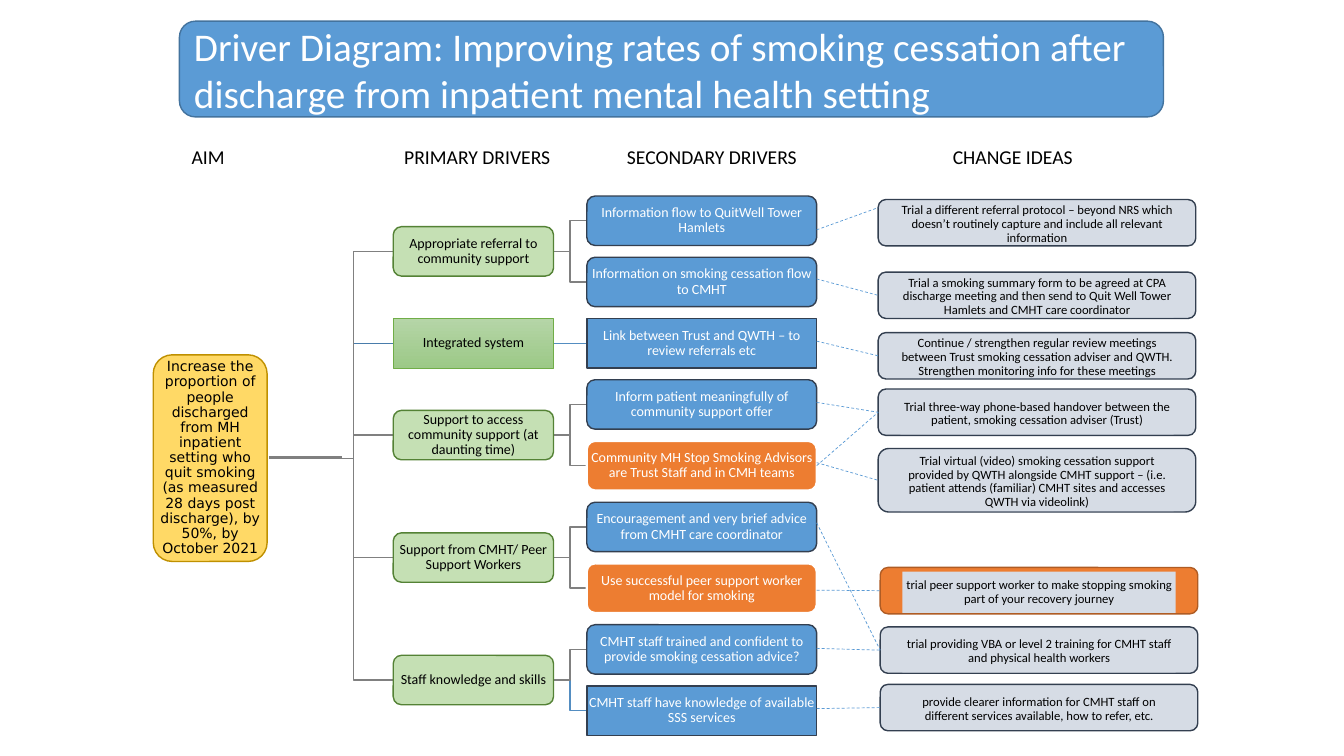
from pptx import Presentation
from pptx import util as u
from pptx.dml import color, line as dml_line
from pptx.enum import dml, shapes, text
from pptx.oxml import ns
from lxml import etree

TITLE = "Driver Diagram: Improving rates of smoking cessation after discharge from inpatient mental health setting"
AIM = ("Increase the proportion of people discharged from MH inpatient setting who quit smoking "
       "(as measured 28 days post discharge), by 50%, by October 2021")
HEADINGS = [
    ("AIM", 1.47, 1.19, "center"),
    ("PRIMARY DRIVERS", 3.91, 2.05, "left"),
    ("SECONDARY DRIVERS", 6.12, 2.05, "left"),
    ("CHANGE IDEAS", 9.02, 2.05, "center"),
]
DRIVERS = [
    ("Appropriate referral to community support", "primary", [
        ("Information flow to QuitWell Tower Hamlets", "secondary"),
        ("Information on smoking cessation flow to CMHT", "secondary")]),
    ("Integrated system", "integrated", [
        ("Link between Trust and QWTH – to review referrals etc", "secondary_square")]),
    ("Support to access community support (at daunting time)", "primary", [
        ("Inform patient meaningfully of community support offer", "secondary"),
        ("Community MH Stop Smoking Advisors are Trust Staff and in CMH teams", "highlight")]),
    ("Support from CMHT/ Peer Support Workers", "primary", [
        ("Encouragement and very brief advice from CMHT care coordinator", "secondary"),
        ("Use successful peer support worker model for smoking", "highlight")]),
    ("Staff knowledge and skills", "primary", [
        ("CMHT staff trained and confident to provide smoking cessation advice?", "secondary"),
        ("CMHT staff have knowledge of available SSS services", "secondary_square")]),
]
IDEAS = [
    ("Trial a different referral protocol – beyond NRS which doesn’t routinely capture and include all "
     "relevant information", 8.71, 1.98, 0.46, "idea"),
    ("Trial a smoking summary form to be agreed at CPA discharge meeting and then send to Quit Well Tower "
     "Hamlets and CMHT care coordinator", 8.71, 2.7, 0.46, "idea"),
    ("Continue / strengthen regular review meetings between Trust smoking cessation adviser and QWTH. "
     "Strengthen monitoring info for these meetings", 8.71, 3.3, 0.46, "idea"),
    ("Trial three-way phone-based handover between the patient, smoking cessation adviser (Trust)",
     8.71, 3.86, 0.46, "idea"),
    ("Trial virtual (video) smoking cessation support provided by QWTH alongside CMHT support – (i.e. "
     "patient attends (familiar) CMHT sites and accesses QWTH via videolink)", 8.71, 4.45, 0.63, "idea"),
    ("trial peer support worker to make stopping smoking part of your recovery journey",
     8.73, 5.63, 0.46, "idea_highlight"),
    ("trial providing VBA or level 2 training for CMHT staff and physical health workers",
     8.73, 6.22, 0.46, "idea"),
    ("provide clearer information for CMHT staff on different services available, how to refer, etc.",
     8.73, 6.79, 0.46, "idea"),
]
IDEA_LINKS = [
    (0, 0.09, 0, -0.15), (1, -0.03, 1, 0), (2, -0.02, 2, 0), (3, -0.02, 3, 0), (4, 0, 3, 0),
    (4, -0.03, 4, 0), (6, 0.02, 5, 0), (7, -0.01, 6, 0), (8, -0.02, 7, 0), (5, -0.04, 6, 0),
]

THEME = {
    "font": "Calibri", "aim_font": "DejaVu Sans",
    "sizes": {"title": 28, "heading": 14, "box": 10, "idea": 9},
    "black": "000000", "white": "FFFFFF", "tree": "808080", "tree_blue": "538DC1",
    "trunk_blue": "497CAB", "dash": "5B9BD5", "panel": "D6DCE5",
    "gradient": ("B5D5A7", "9CC987"),
    "boxes": {
        "title": ("ROUNDED_RECTANGLE", "5B9BD5", "43739E", 1, "FFFFFF"),
        "aim": ("ROUNDED_RECTANGLE", "FFD966", "BF9000", 1, "000000"),
        "primary": ("ROUNDED_RECTANGLE", "C5E0B4", "548235", 1, "000000"),
        "integrated": ("RECTANGLE", None, "70AD47", 0.5, "000000"),
        "secondary": ("ROUNDED_RECTANGLE", "5B9BD5", "333F50", 1, "FFFFFF"),
        "secondary_square": ("RECTANGLE", "5B9BD5", "333F50", 1, "FFFFFF"),
        "highlight": ("ROUNDED_RECTANGLE", "ED7D31", "FFFFFF", 1.5, "FFFFFF"),
        "idea": ("ROUNDED_RECTANGLE", "D6DCE5", "333F50", 1, "000000"),
        "idea_highlight": ("ROUNDED_RECTANGLE", "ED7D31", "AF5C24", 1, "000000"),
        "panel": ("RECTANGLE", "D6DCE5", None, 0, "000000"),
    },
}
AIM_BOX = (1.52, 3.52, 1.13, 2.05)
TITLE_BOX = (1.78, 0.21, 9.76, 0.95)
PRIMARY_LEFT, PRIMARY_WIDTH = 3.9, 1.59
SECONDARY_LEFT, SECONDARY_WIDTH = 5.82, 2.28
BOX_HEIGHT, FIRST_ROW, ROW_PITCH = 0.49, 2.19, 0.6075
IDEA_WIDTH, PANEL_INSET = 3.15, 0.22
TRUNK_START, AIM_MIDDLE = 3.11, 4.55

presentation = Presentation()
presentation.slide_width, presentation.slide_height = u.Inches(13.33), u.Inches(7.5)
slide = presentation.slides.add_slide(presentation.slide_layouts[6])


def rgb(value):
    return color.RGBColor.from_string(value)


def write(shape, words, size, ink, align="center", font=THEME["font"], spacing=0.9, inset=(0.01, 0.01),
          anchor="MIDDLE"):
    across, down = (u.Inches(value) for value in inset)
    frame = shape.text_frame
    frame_format = {"word_wrap": True, "vertical_anchor": getattr(text.MSO_ANCHOR, anchor),
                    "margin_left": across, "margin_right": across, "margin_top": down, "margin_bottom": down}
    for name, value in frame_format.items():
        setattr(frame, name, value)
    paragraph = frame.paragraphs[0]
    paragraph.alignment = getattr(text.PP_ALIGN, align.upper())
    paragraph.line_spacing = spacing
    run = paragraph.add_run()
    run.text = words
    for name, value in {"name": font, "size": u.Pt(THEME["sizes"][size])}.items():
        setattr(run.font, name, value)
    run.font.color.rgb = rgb(ink)


def add_box(bounds, style, words="", size="box", **format_values):
    kind, fill, outline, weight, ink = THEME["boxes"][style]
    shape = slide.shapes.add_shape(getattr(shapes.MSO_SHAPE, kind), *map(u.Inches, bounds))
    shape.shadow.inherit = False
    if fill:
        shape.fill.solid()
        shape.fill.fore_color.rgb = rgb(fill)
    else:
        shape.fill.gradient()
        shape.fill.gradient_angle = 270
        for stop, value in zip(shape.fill.gradient_stops, THEME["gradient"]):
            stop.color.rgb = rgb(value)
    if outline:
        shape.line.color.rgb = rgb(outline)
        shape.line.width = u.Pt(weight)
    else:
        shape.line.fill.background()
    if words:
        write(shape, words, size, ink, **format_values)


def add_line(start, end, ink, weight, dashed=False):
    connector = slide.shapes.add_connector(shapes.MSO_CONNECTOR.STRAIGHT, *map(u.Inches, start + end))
    connector.line.color.rgb = rgb(ink)
    connector.line.width = u.Pt(weight)
    if dashed:
        connector.line.dash_style = dml.MSO_LINE.DASH
    etree.SubElement(connector._element.spPr, ns.qn("a:effectLst"))


def add_branch(start, end, ink):
    if start[1] == end[1]:
        add_line(start, end, ink, 1)
        return
    middle = (start[0] + end[0]) / 2
    points = [(middle, start[1]), (middle, end[1]), end]
    builder = slide.shapes.build_freeform(*map(u.Inches, start))
    builder.add_line_segments([tuple(map(u.Inches, point)) for point in points], close=False)
    branch = builder.convert_to_shape()
    branch.shadow.inherit = False
    branch.fill.background()
    branch.line.color.rgb = rgb(ink)
    branch.line.width = u.Pt(1)


primaries, secondaries = [], []
for words, style, children in DRIVERS:
    rows = [FIRST_ROW + ROW_PITCH * (len(secondaries) + index) for index in range(len(children))]
    primaries.append((words, style, sum(rows) / len(rows), rows))
    secondaries += [(child, child_style, row) for (child, child_style), row in zip(children, rows)]

last_row = secondaries[-1][2]
for words, style, middle, rows in reversed(primaries):
    for row in reversed(rows):
        blue = style == "integrated" or row == last_row
        add_branch((PRIMARY_LEFT + PRIMARY_WIDTH, middle), (SECONDARY_LEFT, row),
                   THEME["tree_blue" if blue else "tree"])
    add_branch((TRUNK_START, AIM_MIDDLE), (PRIMARY_LEFT, middle),
               THEME["trunk_blue" if style == "integrated" else "tree"])

add_box(AIM_BOX, "aim", AIM, font=THEME["aim_font"])
for words, style, middle, rows in primaries:
    add_box((PRIMARY_LEFT, middle - BOX_HEIGHT / 2, PRIMARY_WIDTH, BOX_HEIGHT), style, words)
for words, style, middle in secondaries:
    add_box((SECONDARY_LEFT, middle - BOX_HEIGHT / 2, SECONDARY_WIDTH, BOX_HEIGHT), style, words)

for words, left, width, align in HEADINGS:
    heading = slide.shapes.add_textbox(*map(u.Inches, (left, 1.39, width, 0.35)))
    write(heading, words, "heading", THEME["black"], align, spacing=1.0, inset=(0.1, 0.05), anchor="TOP")

for words, left, top, height, style in IDEAS:
    add_box((left, top, IDEA_WIDTH, height), style)
    add_box((left + PANEL_INSET, top + 0.04, IDEA_WIDTH - 2 * PANEL_INSET, height - 0.05),
            "panel", words, "idea")

add_line((2.67, 4.54), (3.39, 4.54), THEME["tree"], 2)
add_box(TITLE_BOX, "title", TITLE, "title", align="left", spacing=1.0, inset=(0.1, 0.05))

for row, start_shift, idea, end_shift in IDEA_LINKS:
    words, left, top, height, style = IDEAS[idea]
    add_line((SECONDARY_LEFT + SECONDARY_WIDTH, secondaries[row][2] + start_shift),
             (left, top + height / 2 + end_shift), THEME["dash"], 0.5, dashed=True)

presentation.save("out.pptx")
